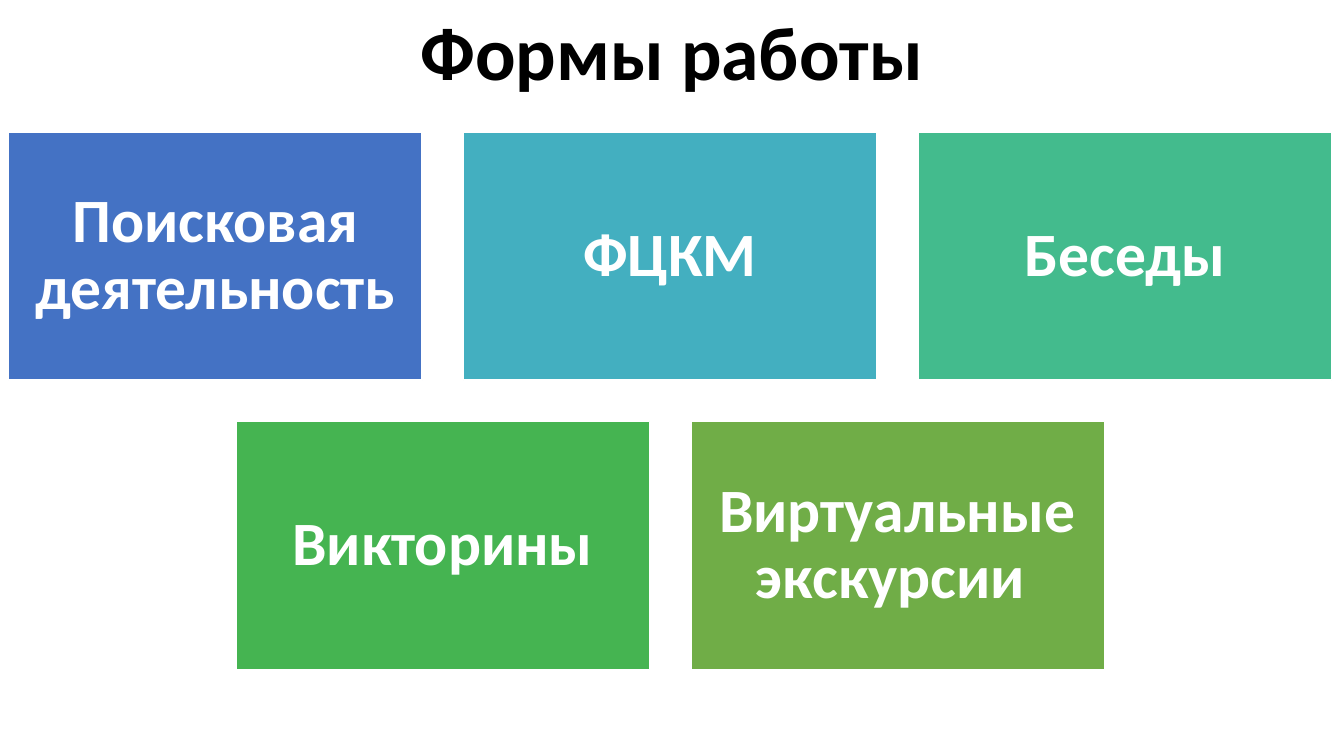
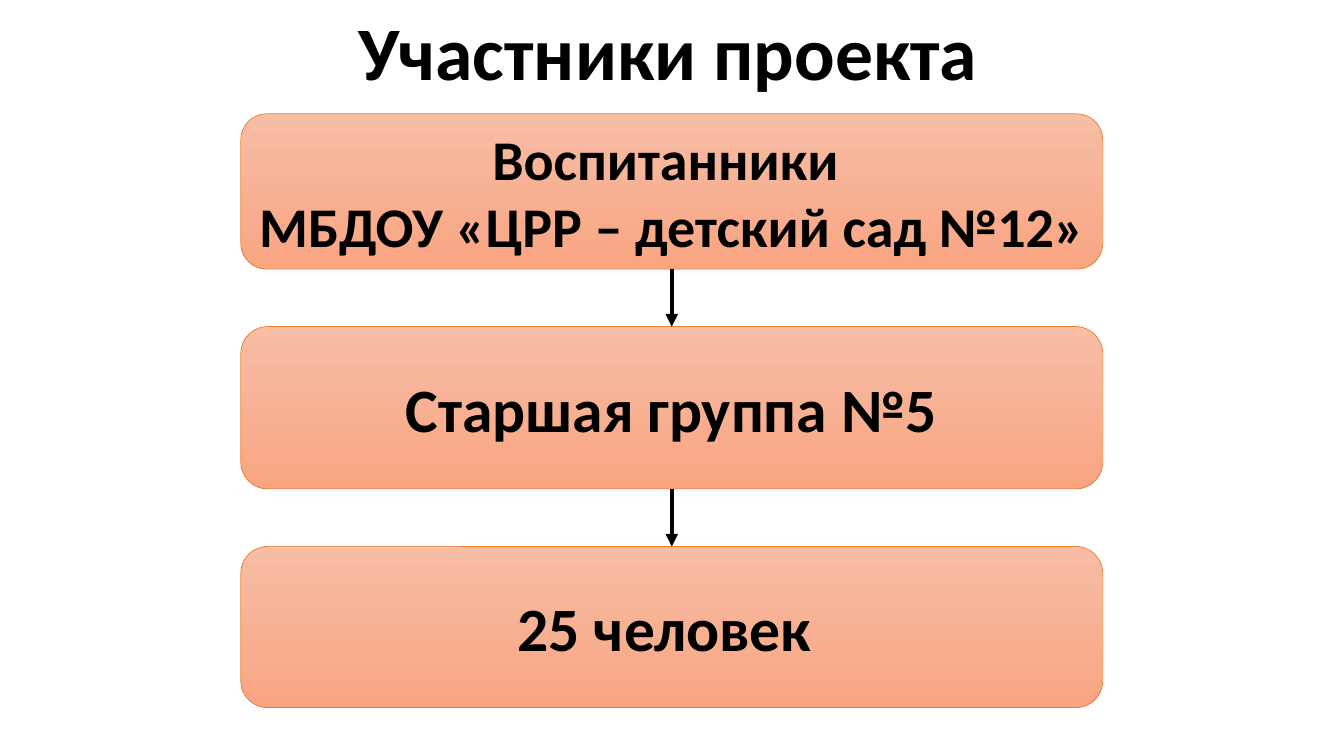
from lxml import etree
from pptx import Presentation
from pptx.dml.color import RGBColor
from pptx.enum.shapes import MSO_CONNECTOR, MSO_SHAPE
from pptx.enum.text import MSO_ANCHOR, MSO_AUTO_SIZE, PP_ALIGN
from pptx.oxml.ns import qn
from pptx.util import Cm, Pt

RECTANGLE = MSO_SHAPE.RECTANGLE
ROUNDED = MSO_SHAPE.ROUNDED_RECTANGLE
STRAIGHT = MSO_CONNECTOR.STRAIGHT
TOP, MIDDLE = MSO_ANCHOR.TOP, MSO_ANCHOR.MIDDLE
CENTER = PP_ALIGN.CENTER
NO_AUTOFIT = MSO_AUTO_SIZE.NONE

FONT = "Calibri"
BLACK, WHITE, ORANGE = "000000", "FFFFFF", "ED7D31"
BOX_GRADIENT = ("F7BDA5", "F8A582")
TITLE_ONLY = 5
TOP_SITE, BOTTOM_SITE = 0, 2

TILE_WIDTH, TILE_HEIGHT, TILE_GAP = 10.42, 6.25, 1.04
TILES_CENTER, TILES_TOP = 16.89, 3.33
TILE_ROWS = [
    [("Поисковая деятельность", "4472C4"), ("ФЦКМ", "43AFC0"), ("Беседы", "43BB8D")],
    [("Викторины", "45B451"), ("Виртуальные экскурсии ", "70AD47")],
]

BOX_LEFT, BOX_WIDTH, BOX_GAP = 6.07, 21.72, 1.45
BOXES_TOP = 2.87
BOXES = [
    ("Воспитанники \nМБДОУ «ЦРР – детский сад №12»", 40, 3.91),
    ("Старшая группа №5", 44, 4.09),
    ("25 человек ", 44, 4.06),
]


def color(value):
    return RGBColor.from_string(value)


def write(shape, text, size, text_color, anchor=MIDDLE):
    frame = shape.text_frame
    frame.text = text
    frame.word_wrap = True
    frame.auto_size = NO_AUTOFIT
    frame.vertical_anchor = anchor
    for paragraph in frame.paragraphs:
        paragraph.alignment = CENTER
        paragraph.font.name = FONT
        paragraph.font.size = Pt(size)
        paragraph.font.bold = True
        paragraph.font.color.rgb = color(text_color)
    return frame


def add_titled_slide(presentation, text, width):
    slide = presentation.slides.add_slide(presentation.slide_layouts[TITLE_ONLY])
    title = slide.shapes.title
    title.left, title.top = Cm(0), Cm(0)
    title.width, title.height = Cm(width), Cm(2.57)
    write(title, text, 54, BLACK, TOP)
    return slide


def add_block(slide, kind, left, top, width, height, line_color, line_width):
    shape = slide.shapes.add_shape(kind, Cm(left), Cm(top), Cm(width), Cm(height))
    shape.shadow.inherit = False
    shape.line.color.rgb = color(line_color)
    shape.line.width = Pt(line_width)
    return shape


def add_tile(slide, left, top, text, fill):
    tile = add_block(slide, RECTANGLE, left, top, TILE_WIDTH, TILE_HEIGHT, WHITE, 1)
    tile.fill.solid()
    tile.fill.fore_color.rgb = color(fill)
    frame = write(tile, text, 44, WHITE)
    frame.margin_left = frame.margin_right = Cm(0.46)
    frame.margin_top = frame.margin_bottom = Cm(0.46)
    frame.paragraphs[0].line_spacing = 0.9


def add_box(slide, top, height, text, size):
    box = add_block(slide, ROUNDED, BOX_LEFT, top, BOX_WIDTH, height, ORANGE, 0.5)
    box.fill.gradient()
    box.fill.gradient_angle = 270
    for stop, value in zip(box.fill.gradient_stops, BOX_GRADIENT):
        stop.color.rgb = color(value)
    write(box, text, size, BLACK)
    return box


def add_arrow(slide, upper, lower):
    arrow = slide.shapes.add_connector(STRAIGHT, 0, 0, 0, 0)
    arrow.begin_connect(upper, BOTTOM_SITE)
    arrow.end_connect(lower, TOP_SITE)
    arrow.line.color.rgb = color(BLACK)
    arrow.line.width = Pt(3)
    properties = arrow.element.spPr
    etree.SubElement(properties.find(qn("a:ln")), qn("a:tailEnd"), type="triangle")
    etree.SubElement(properties, qn("a:effectLst"))


def build_work_forms(presentation):
    slide = add_titled_slide(presentation, "Формы работы", 33.87)
    for row, tiles in enumerate(TILE_ROWS):
        row_width = len(tiles) * (TILE_WIDTH + TILE_GAP) - TILE_GAP
        top = TILES_TOP + row * (TILE_HEIGHT + TILE_GAP)
        for column, (text, fill) in enumerate(tiles):
            left = TILES_CENTER - row_width / 2 + column * (TILE_WIDTH + TILE_GAP)
            add_tile(slide, left, top, text, fill)


def build_participants(presentation):
    slide = add_titled_slide(presentation, "Участники проекта", 33.68)
    boxes = []
    top = BOXES_TOP
    for text, size, height in BOXES:
        boxes.append(add_box(slide, top, height, text, size))
        top += height + BOX_GAP
    for upper, lower in zip(boxes, boxes[1:]):
        add_arrow(slide, upper, lower)


def main():
    presentation = Presentation()
    presentation.slide_width, presentation.slide_height = Cm(33.87), Cm(19.05)
    build_work_forms(presentation)
    build_participants(presentation)
    presentation.save("out.pptx")


if __name__ == "__main__":
    main()
